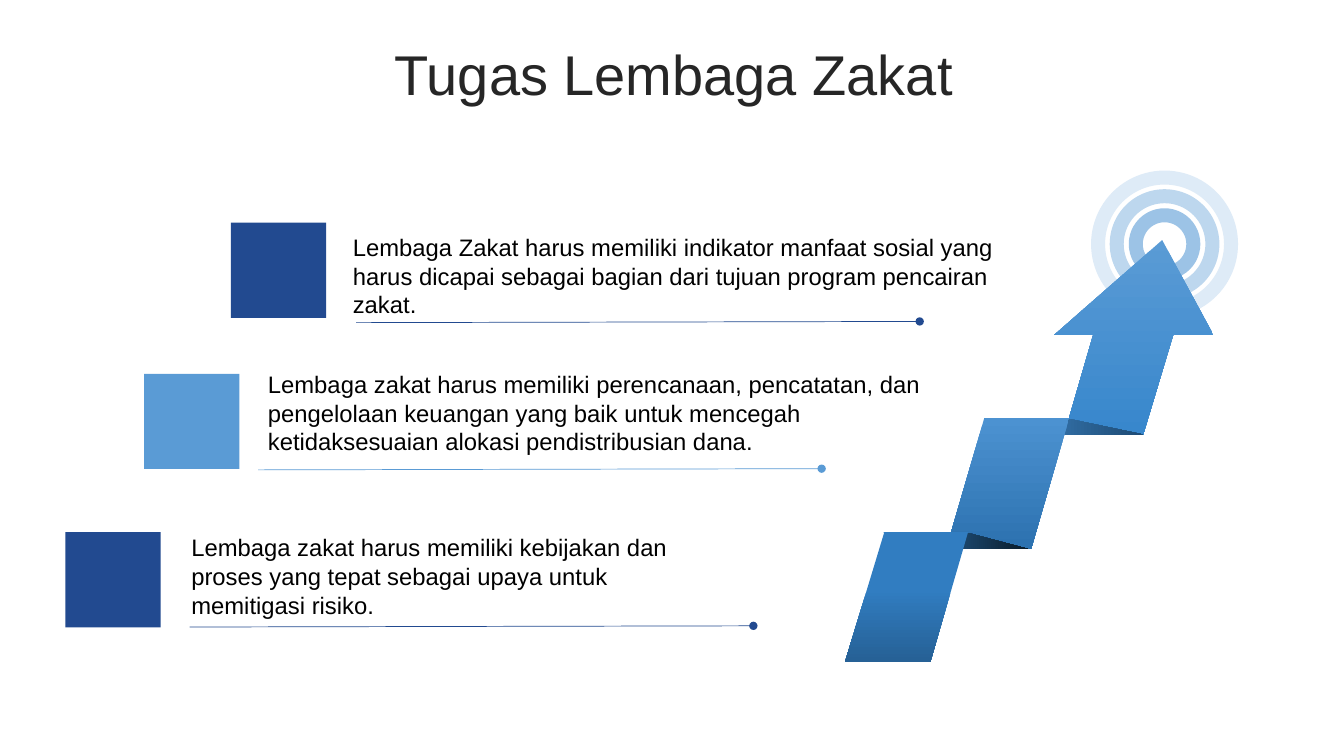
from lxml.etree import SubElement
from pptx import Presentation
from pptx.dml.color import RGBColor
from pptx.enum.shapes import MSO_CONNECTOR as Link, MSO_SHAPE as Preset
from pptx.enum.text import MSO_ANCHOR as Anchor, MSO_AUTO_SIZE as Fit, PP_ALIGN as Align
from pptx.oxml.ns import qn
from pptx.util import Cm, Pt

# Content
HEADING = "Tugas Lembaga Zakat"
TASKS = [  # text, colour, square corner, text corner, text width, rule start
    ("Lembaga Zakat harus memiliki indikator manfaat sosial yang harus dicapai "
     "sebagai bagian dari tujuan program pencairan zakat.",
     "navy", (5.82, 5.61), (8.64, 5.74), 17.5, (8.97, 8.13)),
    ("Lembaga zakat harus memiliki perencanaan, pencatatan, dan pengelolaan keuangan "
     "yang baik untuk mencegah ketidaksesuaian alokasi pendistribusian dana.",
     "sky", (3.63, 9.42), (6.5, 9.19), 17.5, (6.5, 11.84)),
    ("Lembaga zakat harus memiliki kebijakan dan proses yang tepat sebagai upaya "
     "untuk memitigasi risiko.",
     "navy", (1.65, 13.41), (4.57, 13.31), 12.95, (4.78, 15.8)),
]
TARGET_CENTRE = (29.34, 6.15)
TARGET_RINGS = [(3.35, "ring_outer"), (2.41, "ring_middle"), (1.45, "ring_inner")]
DOWN, RIGHT = 270, 0
RIBBON = [  # outline, gradient colours, first stop, direction; back to front
    ([(29.28, 6.05), (30.57, 8.44), (29.56, 8.44), (28.8, 10.96),
      (26.81, 10.96), (27.54, 8.44), (26.56, 8.44)], ("5A9BD5", "3887CC"), 0, DOWN),
    ([(28.8, 10.95), (27, 10.57), (24.84, 10.57), (26.14, 10.97)],
     ("428CCF", "1E4B74"), 0, RIGHT),
    ([(24.8, 10.53), (26.94, 10.53), (25.98, 13.83), (23.84, 13.83)],
     ("4C92D1", "2D72B0"), 0, DOWN),
    ([(25.93, 13.84), (24.43, 13.44), (22.25, 13.41), (23.42, 13.82)],
     ("307ABC", "0A1B29"), 0, RIGHT),
    ([(22.28, 13.41), (24.39, 13.41), (23.44, 16.68), (21.29, 16.68)],
     ("317DC1", "266196"), 0.44, DOWN),
]

# Theme and shared sizes
THEME = {
    "font": "Arial", "heading_size": Pt(40), "task_size": Pt(17),
    "heading": "262626", "task": "000000", "navy": "224A90", "sky": "5A9BD5",
    "ring_outer": "DEEBF7", "ring_middle": "BDD7EE", "ring_inner": "9CC3E6",
}
SQUARE, TASK_HEIGHT = 2.4, 2.44
RULE_LENGTH, RULE_RISE = 14.2, 0.03


def colour(name):
    return RGBColor.from_string(THEME.get(name, name))


def apply(target, values):
    for attribute, value in values.items():
        setattr(target, attribute, value)


def write(frame, text, role, frame_format, paragraph_format):
    frame.text = text
    apply(frame, frame_format)
    paragraph = frame.paragraphs[0]
    apply(paragraph, paragraph_format)
    font = paragraph.runs[0].font
    apply(font, {"name": THEME["font"], "size": THEME[role + "_size"]})
    font.color.rgb = colour(role)


def add_square(slide, corner, name):
    square = slide.shapes.add_shape(Preset.RECTANGLE, *map(Cm, corner), Cm(SQUARE), Cm(SQUARE))
    square.shadow.inherit = False
    square.fill.solid()
    square.fill.fore_color.rgb = colour(name)
    square.line.fill.background()


def add_rule(slide, start, name):
    left, top = start
    rule = slide.shapes.add_connector(
        Link.STRAIGHT, Cm(left), Cm(top), Cm(left + RULE_LENGTH), Cm(top - RULE_RISE))
    rule.line.width = Pt(0.5)
    rule.line.color.rgb = colour(name)
    properties = rule._element.spPr
    SubElement(properties.find(qn("a:ln")), qn("a:tailEnd"), type="oval")
    SubElement(properties, qn("a:effectLst"))


def add_ring(slide, diameter, name):
    corner = [Cm(middle - diameter / 2) for middle in TARGET_CENTRE]
    ring = slide.shapes.add_shape(Preset.OVAL, *corner, Cm(diameter), Cm(diameter))
    ring.shadow.inherit = False
    ring.fill.background()
    ring.line.width = Pt(10)
    ring.line.color.rgb = colour(name)


def add_ribbon_part(slide, outline, shades, first_stop, direction):
    corners = [(Cm(x), Cm(y)) for x, y in outline]
    builder = slide.shapes.build_freeform(*corners[0])
    builder.add_line_segments(corners[1:], close=True)
    part = builder.convert_to_shape()
    part.shadow.inherit = False
    part.line.fill.background()
    part.fill.gradient()
    part.fill.gradient_angle = direction
    for stop, shade, position in zip(part.fill.gradient_stops, shades, (first_stop, 0.99)):
        stop.color.rgb = colour(shade)
        stop.position = position


def main():
    deck = Presentation()
    apply(deck, {"slide_width": Cm(33.86), "slide_height": Cm(19.05)})
    slide = deck.slides.add_slide(deck.slide_layouts[5])

    # Heading
    heading = slide.shapes.title
    apply(heading, {"left": Cm(0.89), "top": Cm(0.94), "width": Cm(32.16), "height": Cm(2.01)})
    write(heading.text_frame, HEADING, "heading",
          {"vertical_anchor": Anchor.MIDDLE, "word_wrap": True, "auto_size": Fit.NONE},
          {"alignment": Align.CENTER, "line_spacing": 0.9})

    # Target and folded arrow
    for diameter, name in TARGET_RINGS:
        add_ring(slide, diameter, name)
    for part in RIBBON:
        add_ribbon_part(slide, *part)

    # Tasks
    for text, name, square_corner, text_corner, width, rule_start in TASKS:
        add_rule(slide, rule_start, name)
        box = slide.shapes.add_textbox(*map(Cm, text_corner), Cm(width), Cm(TASK_HEIGHT))
        write(box.text_frame, text, "task",
              {"word_wrap": True, "auto_size": Fit.SHAPE_TO_FIT_TEXT}, {"alignment": Align.LEFT})
        add_square(slide, square_corner, name)

    deck.save("out.pptx")


if __name__ == "__main__":
    main()
